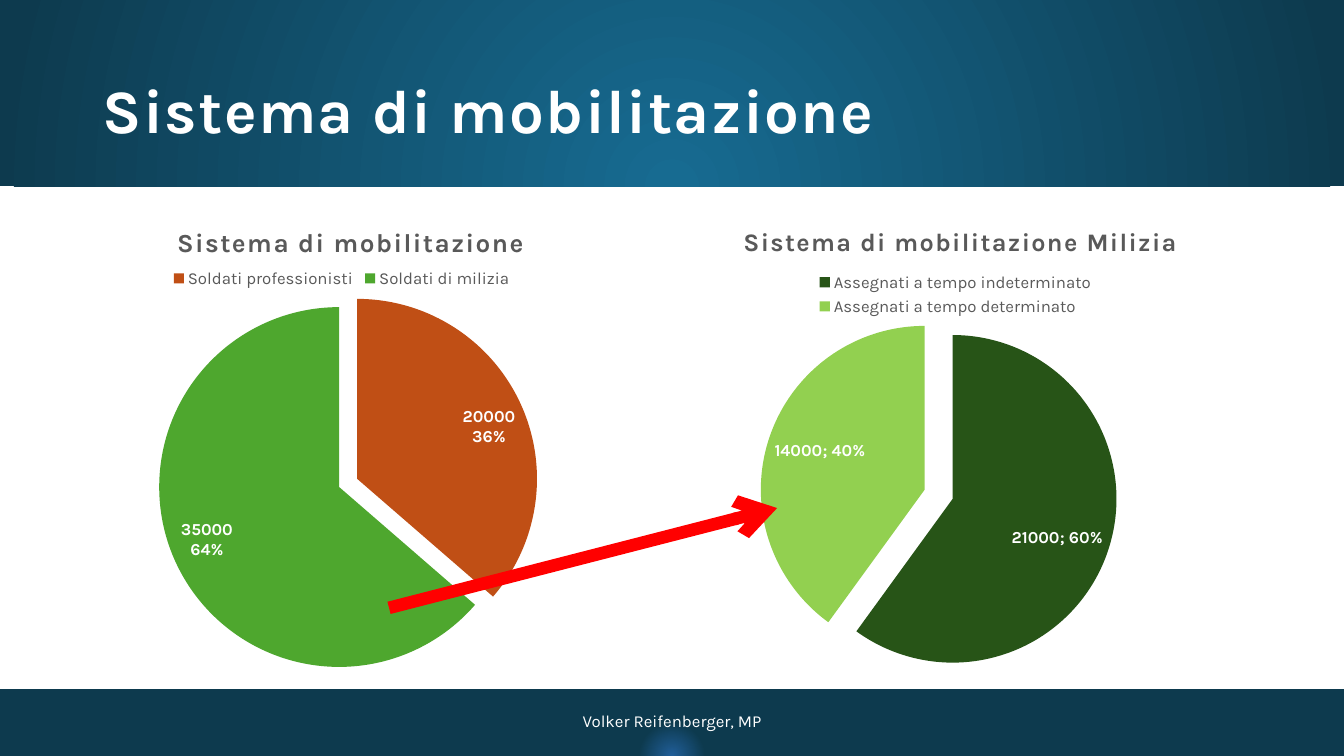
import pptx
import pptx.chart.data
import pptx.dml.color
import pptx.enum.chart
import pptx.enum.shapes
import pptx.enum.text
import pptx.oxml
import pptx.oxml.ns
import pptx.util

Pt = pptx.util.Pt
qn = pptx.oxml.ns.qn
NAMESPACES = pptx.oxml.ns.nsdecls("a", "c")


def color(hex_value):
    return pptx.dml.color.RGBColor.from_string(hex_value)


def style(font, size, hex_value, bold=False):
    font.name = "Karla"
    font.size = Pt(size)
    font.bold = bold
    font.color.rgb = color(hex_value)


deck = pptx.Presentation()
deck.slide_width, deck.slide_height = Pt(960), Pt(540)
slide = deck.slides.add_slide(deck.slide_layouts[6])
slide.background.fill.solid()
slide.background.fill.fore_color.rgb = color("FFFFFF")

bands = [
    (492.2, 47.8, [(0, "215F9A"), (5, "0D3A4E"), (100, "0D3A4E")]),
    (0, 133.2, [(0, "176B91"), (1, "176B91"), (100, "0D3A4E")]),
]
for top, height, stops in bands:
    band = slide.shapes.add_shape(
        pptx.enum.shapes.MSO_SHAPE.RECTANGLE, 0, Pt(top), Pt(960), Pt(height))
    band.shadow.inherit = False
    band.line.fill.background()
    stop_xml = "".join(
        f'<a:gs pos="{pos * 1000}"><a:srgbClr val="{hex_value}"/></a:gs>'
        for pos, hex_value in stops)
    gradient = pptx.oxml.parse_xml(
        f'<a:gradFill {NAMESPACES} rotWithShape="1"><a:gsLst>{stop_xml}</a:gsLst>'
        '<a:path path="circle"><a:fillToRect l="50000" t="130000" r="50000" b="-30000"/>'
        '</a:path></a:gradFill>')
    band._element.spPr.find(qn("a:prstGeom")).addnext(gradient)

pies = [
    dict(box=(66.2, 144, 355.7, 342.7), title="Sistema di mobilitazione", title_size=18.6,
         parts=[("Soldati professionisti", 20000, "C04F15"),
                ("Soldati di milizia", 35000, "4EA72E")],
         exploded=0, explosion=11, separator="\n",
         title_at=(0.16, 0.04), legend_at=(0.15, 0.13, 0.7, 0.06),
         plot_at=(0.13, 0.22, 0.73, 0.75)),
    dict(box=(480.2, 144, 396.7, 339.8), title="Sistema di mobilitazione Milizia", title_size=18,
         parts=[("Assegnati a tempo indeterminato", 21000, "275417"),
                ("Assegnati a tempo determinato", 14000, "92D050")],
         exploded=1, explosion=18, separator="; ",
         title_at=(0.12, 0.04), legend_at=(0.25, 0.14, 0.52, 0.11),
         plot_at=(0.21, 0.28, 0.59, 0.69)),
]
for pie in pies:
    figures = pptx.chart.data.CategoryChartData()
    figures.categories = [name for name, _, _ in pie["parts"]]
    figures.add_series("Series 1", [value for _, value, _ in pie["parts"]])
    chart = slide.shapes.add_chart(
        pptx.enum.chart.XL_CHART_TYPE.PIE, *map(Pt, pie["box"]), figures).chart
    style(chart.font, 10, "000000")

    chart.has_title = True
    heading = chart.chart_title.text_frame.paragraphs[0].add_run()
    heading.text = pie["title"]
    style(heading.font, pie["title_size"], "595959", True)
    heading._r.get_or_add_rPr().set("spc", "100")

    chart.has_legend = True
    chart.legend.position = pptx.enum.chart.XL_LEGEND_POSITION.TOP
    chart.legend.include_in_layout = False
    style(chart.legend.font, 12, "595959")

    plot = chart.plots[0]
    plot.vary_by_categories = True
    series = plot.series[0]
    for index, (_, _, hex_value) in enumerate(pie["parts"]):
        slice_fill = series.points[index].format.fill
        slice_fill.solid()
        slice_fill.fore_color.rgb = color(hex_value)
    slice_xml = series._element.findall(qn("c:dPt"))[pie["exploded"]]
    slice_xml.find(qn("c:spPr")).addprevious(pptx.oxml.parse_xml(
        f'<c:explosion {NAMESPACES} val="{pie["explosion"]}"/>'))

    labels = series.data_labels
    labels.show_value = True
    labels.show_percentage = True
    labels.position = pptx.enum.chart.XL_LABEL_POSITION.INSIDE_END
    style(labels.font, 12, "FFFFFF", True)
    separator = pptx.oxml.parse_xml(f"<c:separator {NAMESPACES}/>")
    separator.text = pie["separator"]
    labels._element.find(qn("c:showBubbleSize")).addnext(separator)

    for part, tag, place in [
            (chart.chart_title._element, "c:tx", pie["title_at"]),
            (chart.legend._element, "c:legendPos", pie["legend_at"]),
            (chart._chartSpace.chart.plotArea, None, pie["plot_at"])]:
        for old in part.findall(qn("c:layout")):
            part.remove(old)
        target = '<c:layoutTarget val="inner"/>' if tag is None else ""
        modes = '<c:xMode val="edge"/><c:yMode val="edge"/>'
        sides = "".join(f'<c:{side} val="{value}"/>' for side, value in zip("xywh", place))
        layout = pptx.oxml.parse_xml(
            f"<c:layout {NAMESPACES}><c:manualLayout>{target}{modes}{sides}"
            "</c:manualLayout></c:layout>")
        if tag is None:
            part.insert(0, layout)
        else:
            part.find(qn(tag)).addnext(layout)

captions = [
    ("Sistema di mobilitazione", (66.2, 28.8, 828, 104.4), 44, True, "LEFT", 0.9, 100),
    ("Volker Reifenberger, MP", (318.2, 500.4, 324, 28.8), 12, False, "CENTER", 1, 0),
]
for words, box, size, bold, align, leading, tracking in captions:
    frame = slide.shapes.add_textbox(*map(Pt, box)).text_frame
    frame.word_wrap = True
    frame.vertical_anchor = pptx.enum.text.MSO_ANCHOR.MIDDLE
    paragraph = frame.paragraphs[0]
    paragraph.alignment = getattr(pptx.enum.text.PP_ALIGN, align)
    paragraph.line_spacing = leading
    run = paragraph.add_run()
    run.text = words
    style(run.font, size, "FFFFFF", bold)
    run._r.get_or_add_rPr().set("spc", str(tracking))

arrow = slide.shapes.add_connector(
    pptx.enum.shapes.MSO_CONNECTOR.STRAIGHT, Pt(277.9), Pt(434.2), Pt(555.1), Pt(362.9))
arrow.line.color.rgb = color("FF0000")
arrow.line.width = Pt(9)
arrow.line._get_or_add_ln().append(pptx.oxml.parse_xml(f'<a:tailEnd {NAMESPACES} type="arrow"/>'))
arrow._element.spPr.append(pptx.oxml.parse_xml(f"<a:effectLst {NAMESPACES}/>"))

deck.save("out.pptx")
